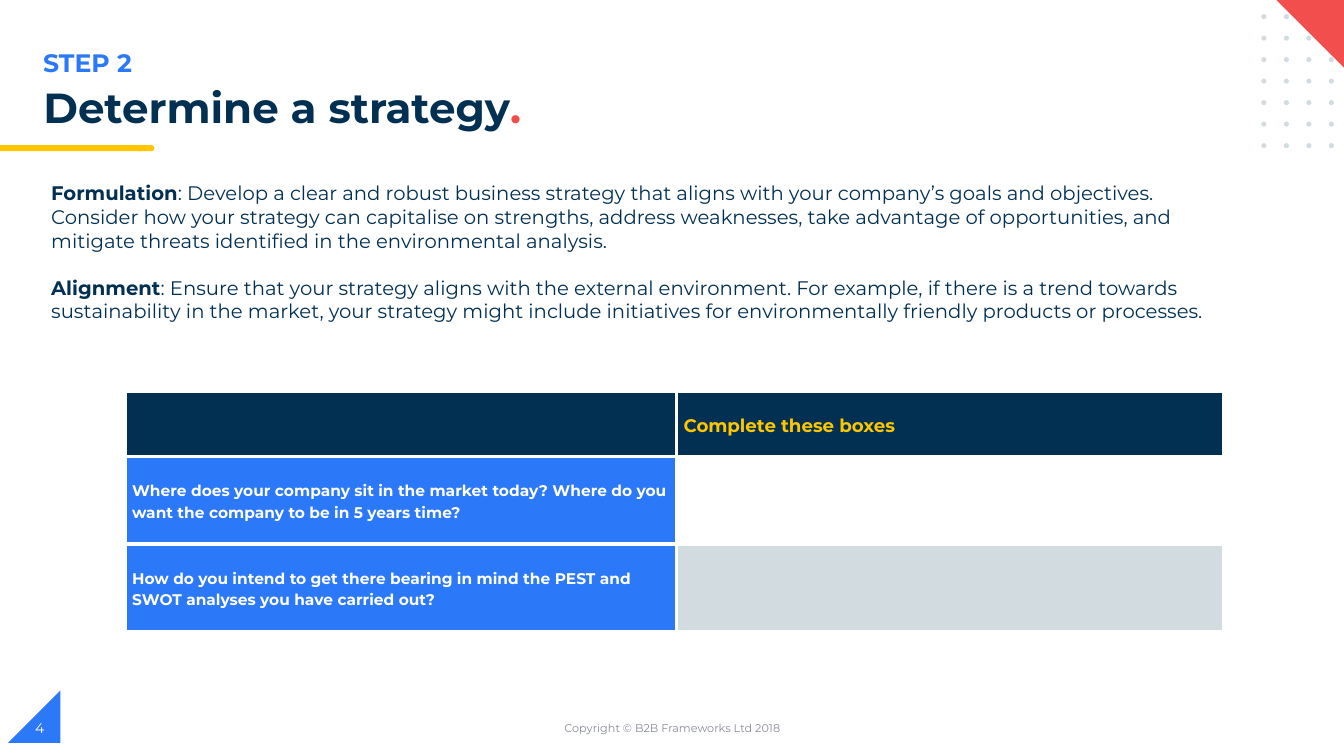
from dataclasses import dataclass
from itertools import product

from lxml.etree import SubElement
from pptx import Presentation
from pptx.dml.color import RGBColor
from pptx.enum.shapes import MSO_SHAPE as SHAPE
from pptx.enum.text import MSO_ANCHOR as ANCHOR, PP_ALIGN as ALIGN
from pptx.oxml.ns import qn
from pptx.util import Inches, Pt


@dataclass(frozen=True)
class Theme:
    """Colours, font and type sizes of the slide."""
    font: str = "Montserrat"
    navy: str = "023053"
    blue: str = "2B79F8"
    yellow: str = "FFC600"
    red: str = "F24E4E"
    mist: str = "D1DBE0"
    grey: str = "888C97"
    white: str = "FFFFFF"
    title: int = 30
    step: int = 18
    body: int = 14
    head: int = 13
    cell: int = 11
    page: int = 10
    footer: int = 8


T = Theme()

STEP = "STEP 2"
TITLE = [("Determine a strategy", T.navy, True), (".", T.red, True)]
BODY = [
    ("Formulation", ": Develop a clear and robust business strategy that aligns with your "
     "company’s goals and objectives. Consider how your strategy can capitalise on strengths, "
     "address weaknesses, take advantage of opportunities, and mitigate threats identified in "
     "the environmental analysis."),
    ("Alignment", ": Ensure that your strategy aligns with the external environment. For "
     "example, if there is a trend towards sustainability in the market, your strategy might "
     "include initiatives for environmentally friendly products or processes."),
]
ROWS = [
    [("", T.navy), ("Complete these boxes", T.navy)],
    [("Where does your company sit in the market today? Where do you want the company to be "
      "in 5 years time?", T.blue), ("", T.white)],
    [("How do you intend to get there bearing in mind the PEST and SWOT analyses you have "
      "carried out?", T.blue), ("", T.mist)],
]
COL_WIDTHS = [5.47, 5.43]
ROW_HEIGHTS = [0.65, 0.87, 0.87]
COPYRIGHT = "Copyright © B2B Frameworks Ltd 2018"
PAGE = "4"

DOT_COLS, DOT_ROWS = 4, 7
DOT_LEFT, DOT_TOP, DOT_WIDTH, DOT_HEIGHT = 12.51, 0.14, 0.67, 1.28


def box(*lengths):
    return [Inches(v) for v in lengths]


def set_attrs(target, **values):
    for name, value in values.items():
        setattr(target, name, value)


def add_runs(p, runs, size):
    for text, color, bold in runs:
        r = p.add_run()
        r.text = text
        set_attrs(r.font, name=T.font, size=Pt(size), bold=bold)
        r.font.color.rgb = RGBColor.from_string(color)


def add_shape(shapes, kind, at, color):
    s = shapes.add_shape(kind, *box(*at))
    s.shadow.inherit = False
    s.fill.solid()
    s.fill.fore_color.rgb = RGBColor.from_string(color)
    s.line.fill.background()
    return s


def add_text(shapes, at, paragraphs, size, anchor=ANCHOR.TOP, align=ALIGN.LEFT, gap=0):
    tf = shapes.add_textbox(*box(*at)).text_frame
    set_attrs(tf, word_wrap=True, vertical_anchor=anchor)
    for i, runs in enumerate(paragraphs):
        p = tf.add_paragraph() if i else tf.paragraphs[0]
        set_attrs(p, alignment=align, space_before=Pt(gap if i else 0))
        add_runs(p, runs, size)


def add_borders(cell, color, width):
    tc_pr = cell._tc.get_or_add_tcPr()
    for i, side in enumerate(("lnL", "lnR", "lnT", "lnB")):
        ln = tc_pr.makeelement(qn(f"a:{side}"), {"w": str(Pt(width))})
        SubElement(SubElement(ln, qn("a:solidFill")), qn("a:srgbClr"), val=color)
        tc_pr.insert(i, ln)


def add_decor(shapes):
    page_corner = add_shape(shapes, SHAPE.RIGHT_TRIANGLE, (0.08, 6.85, 0.52, 0.52), T.blue)
    page_corner.element.spPr.xfrm.set("flipH", "1")
    add_shape(shapes, SHAPE.FLOWCHART_TERMINATOR, (1.34, 1.44, 0.19, 0.06), T.yellow)
    add_shape(shapes, SHAPE.RECTANGLE, (0, 1.44, 1.41, 0.06), T.yellow)
    for row, col in product(range(DOT_ROWS), range(DOT_COLS)):
        x = DOT_LEFT + DOT_WIDTH * col / (DOT_COLS - 1)
        y = DOT_TOP + DOT_HEIGHT * row / (DOT_ROWS - 1)
        add_shape(shapes, SHAPE.OVAL, (x, y, 0.05, 0.05), T.mist)
    top_corner = add_shape(shapes, SHAPE.RIGHT_TRIANGLE, (12.65, -0.01, 0.72, 0.72), T.red)
    top_corner.rotation = 180


def add_title(s):
    set_attrs(s, **dict(zip(("left", "top", "width", "height"), box(0.33, 0.82, 11.43, 0.56))))
    tf = s.text_frame
    set_attrs(tf, word_wrap=True, vertical_anchor=ANCHOR.TOP)
    p = tf.paragraphs[0]
    set_attrs(p, alignment=ALIGN.LEFT, line_spacing=0.9)
    add_runs(p, TITLE, T.title)


def add_strategy_table(shapes):
    at = box(1.24, 3.88, sum(COL_WIDTHS), sum(ROW_HEIGHTS))
    table = shapes.add_table(len(ROWS), len(COL_WIDTHS), *at).table
    set_attrs(table, first_row=False, horz_banding=False)
    for col, width in zip(table.columns, COL_WIDTHS):
        col.width = Inches(width)
    for r, (cells, height) in enumerate(zip(ROWS, ROW_HEIGHTS)):
        table.rows[r].height = Inches(height)
        color, size = (T.white, T.cell) if r else (T.yellow, T.head)
        for c, (text, fill) in enumerate(cells):
            cell = table.cell(r, c)
            set_attrs(cell, vertical_anchor=ANCHOR.MIDDLE, margin_left=Inches(0.07),
                      margin_right=Inches(0.07), margin_top=0, margin_bottom=0)
            cell.fill.solid()
            cell.fill.fore_color.rgb = RGBColor.from_string(fill)
            add_borders(cell, T.white, 3)
            if text:
                p = cell.text_frame.paragraphs[0]
                p.line_spacing = 1.15
                add_runs(p, [(text, color, True)], size)


def main():
    """Build the strategy step slide and save it."""
    prs = Presentation()
    set_attrs(prs, slide_width=Inches(13.33), slide_height=Inches(7.5))
    slide = prs.slides.add_slide(prs.slide_layouts[5])
    shapes = slide.shapes
    add_decor(shapes)
    add_text(shapes, (0.33, 0.42, 6.69, 0.4), [[(STEP, T.blue, True)]], T.step)
    add_title(shapes.title)
    body = [[(lead, T.navy, True), (rest, T.navy, False)] for lead, rest in BODY]
    add_text(shapes, (0.41, 1.75, 11.64, 1.52), body, T.body, gap=17)
    add_strategy_table(shapes)
    add_text(shapes, (4.42, 7.02, 4.5, 0.4), [[(COPYRIGHT, T.grey, False)]], T.footer,
             ANCHOR.MIDDLE, ALIGN.CENTER)
    add_text(shapes, (0.25, 7.02, 3, 0.4), [[(PAGE, T.white, False)]], T.page, ANCHOR.MIDDLE)
    prs.save("out.pptx")


if __name__ == "__main__":
    main()
